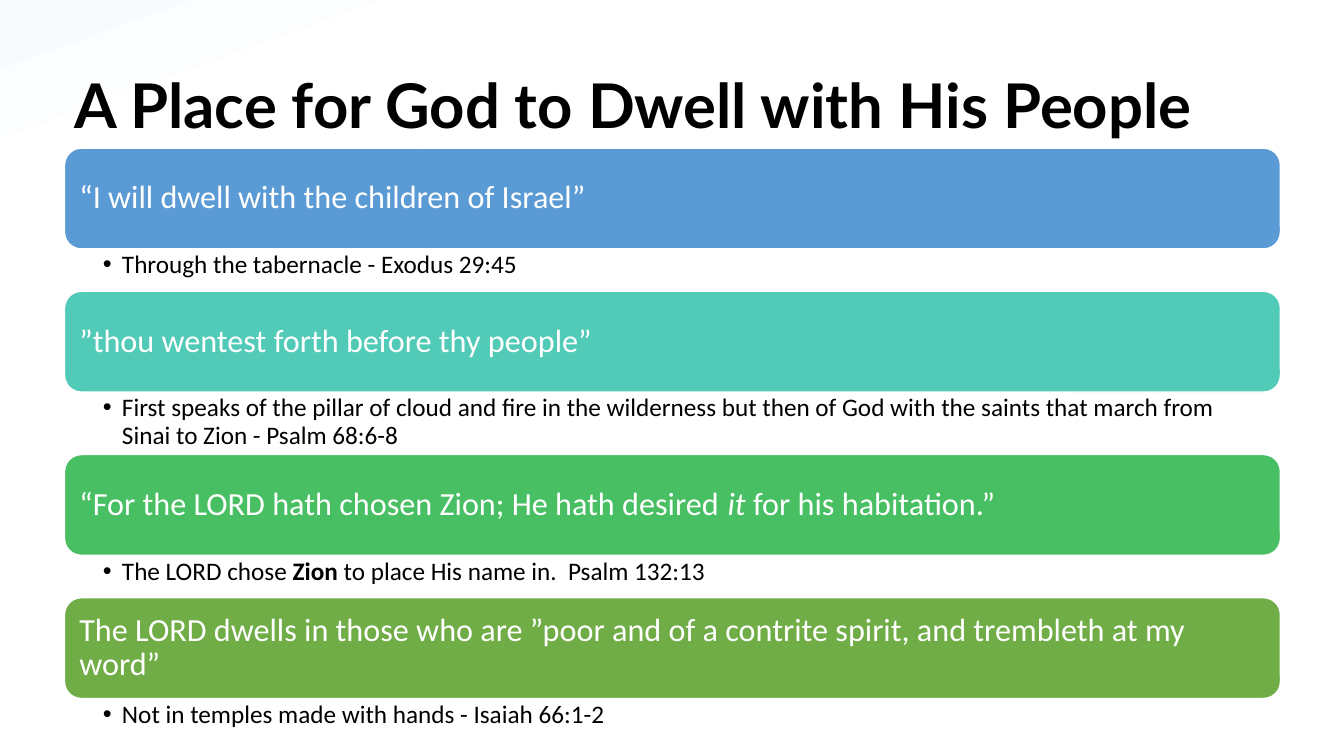
from lxml import etree
from pptx import Presentation
from pptx.dml.color import RGBColor
from pptx.enum.shapes import MSO_SHAPE
from pptx.enum.text import MSO_ANCHOR, MSO_AUTO_SIZE, PP_ALIGN
from pptx.oxml.ns import qn
from pptx.util import Inches, Pt

ROUNDED = MSO_SHAPE.ROUNDED_RECTANGLE
RECTANGLE = MSO_SHAPE.RECTANGLE
MIDDLE = MSO_ANCHOR.MIDDLE
TOP = MSO_ANCHOR.TOP
LEFT = PP_ALIGN.LEFT
NO_AUTOFIT = MSO_AUTO_SIZE.NONE

BLACK = RGBColor(0x00, 0x00, 0x00)
WHITE = RGBColor(0xFF, 0xFF, 0xFF)
MIST = RGBColor(0xF9, 0xFA, 0xFC)
BLUE = RGBColor(0x5B, 0x9B, 0xD5)
TEAL = RGBColor(0x52, 0xCA, 0xB8)
GREEN = RGBColor(0x49, 0xBF, 0x64)
OLIVE = RGBColor(0x70, 0xAD, 0x47)

BANNER_HEIGHT = 1.0
LINE_HEIGHTS = {1: 0.42, 2: 0.62}

PASSAGES = [
    (BLUE, [("“I will dwell with the children of Israel”", "")],
     [("Through the tabernacle - Exodus 29:45", "")], 1),
    (TEAL, [("”thou wentest forth before thy people”", "")],
     [("First speaks of the pillar of cloud and fire in the wilderness but then of God "
       "with the saints that march from Sinai to Zion - Psalm 68:6-8", "")], 2),
    (GREEN, [("“For the LORD hath chosen Zion; He hath desired ", ""), ("it", "italic"),
             (" for his habitation.”", "")],
     [("The LORD chose ", ""), ("Zion", "bold"),
      (" to place His name in.  Psalm 132:13", "")], 1),
    (OLIVE, [("The LORD dwells in those who are ”poor and of a contrite spirit, "
              "and trembleth at my word”", "")],
     [("Not in temples made with hands - Isaiah 66:1-2", "")], 1),
]


def set_frame(text_frame, anchor, left, top, right, bottom):
    text_frame.word_wrap = True
    text_frame.auto_size = NO_AUTOFIT
    text_frame.vertical_anchor = anchor
    text_frame.margin_left = Inches(left)
    text_frame.margin_top = Inches(top)
    text_frame.margin_right = Inches(right)
    text_frame.margin_bottom = Inches(bottom)


def write_runs(paragraph, pieces, size, color, font_name="Calibri"):
    paragraph.alignment = LEFT
    paragraph.line_spacing = 0.9
    for text, style in pieces:
        run = paragraph.add_run()
        run.text = text
        run.font.name = font_name
        run.font.size = Pt(size)
        run.font.color.rgb = color
        run.font.bold = style == "bold"
        run.font.italic = style == "italic"


def add_bullet(paragraph, indent):
    properties = paragraph._p.get_or_add_pPr()
    properties.set("marL", str(Inches(indent)))
    properties.set("indent", str(-Inches(indent)))
    etree.SubElement(properties, qn("a:buFont")).set("typeface", "Arial")
    etree.SubElement(properties, qn("a:buChar")).set("char", "•")


def add_corner_glow(slide, left, top, width, height):
    glow = slide.shapes.add_shape(
        RECTANGLE, Inches(left), Inches(top), Inches(width), Inches(height))
    glow.shadow.inherit = False
    glow.line.fill.background()
    glow.fill.gradient()
    glow.fill.gradient_angle = 290
    for stop, color, position in zip(glow.fill.gradient_stops, (MIST, WHITE), (0, 0.53)):
        stop.color.rgb = color
        stop.position = position
    slide.shapes._spTree.insert(2, glow._element)


def add_title(slide, left, top, width, height):
    title = slide.shapes.title
    title.left, title.top = Inches(left), Inches(top)
    title.width, title.height = Inches(width), Inches(height)
    set_frame(title.text_frame, MIDDLE, 0.1, 0.05, 0.1, 0.05)
    write_runs(title.text_frame.paragraphs[0],
               [("A Place for God to Dwell with His People", "bold")], 44, BLACK, "Lato")


def add_banner(slide, left, top, width, height, color, pieces):
    banner = slide.shapes.add_shape(
        ROUNDED, Inches(left), Inches(top), Inches(width), Inches(height))
    banner.shadow.inherit = False
    banner.fill.solid()
    banner.fill.fore_color.rgb = color
    banner.line.color.rgb = WHITE
    banner.line.width = Pt(1)
    set_frame(banner.text_frame, MIDDLE, 0.1, 0.1, 0.1, 0.1)
    write_runs(banner.text_frame.paragraphs[0], pieces, 23, WHITE)


def add_reference(slide, left, top, width, height, pieces):
    box = slide.shapes.add_textbox(
        Inches(left), Inches(top), Inches(width), Inches(height))
    set_frame(box.text_frame, TOP, 0.38, 0.03, 0.18, 0.03)
    paragraph = box.text_frame.paragraphs[0]
    add_bullet(paragraph, 0.19)
    write_runs(paragraph, pieces, 18, BLACK)


def add_passages(slide, left, top, width):
    for color, quote, reference, line_count in PASSAGES:
        add_banner(slide, left, top, width, BANNER_HEIGHT, color, quote)
        top += BANNER_HEIGHT
        add_reference(slide, left, top, width, LINE_HEIGHTS[line_count], reference)
        top += LINE_HEIGHTS[line_count]


def main():
    presentation = Presentation()
    presentation.slide_width = Inches(13.33)
    presentation.slide_height = Inches(7.5)
    slide = presentation.slides.add_slide(presentation.slide_layouts[5])
    add_corner_glow(slide, 0, 0, 4.2, 2.37)
    add_title(slide, 0.64, 0.35, 12.06, 1.45)
    add_passages(slide, 0.64, 1.47, 12.06)
    presentation.save("out.pptx")


if __name__ == "__main__":
    main()
